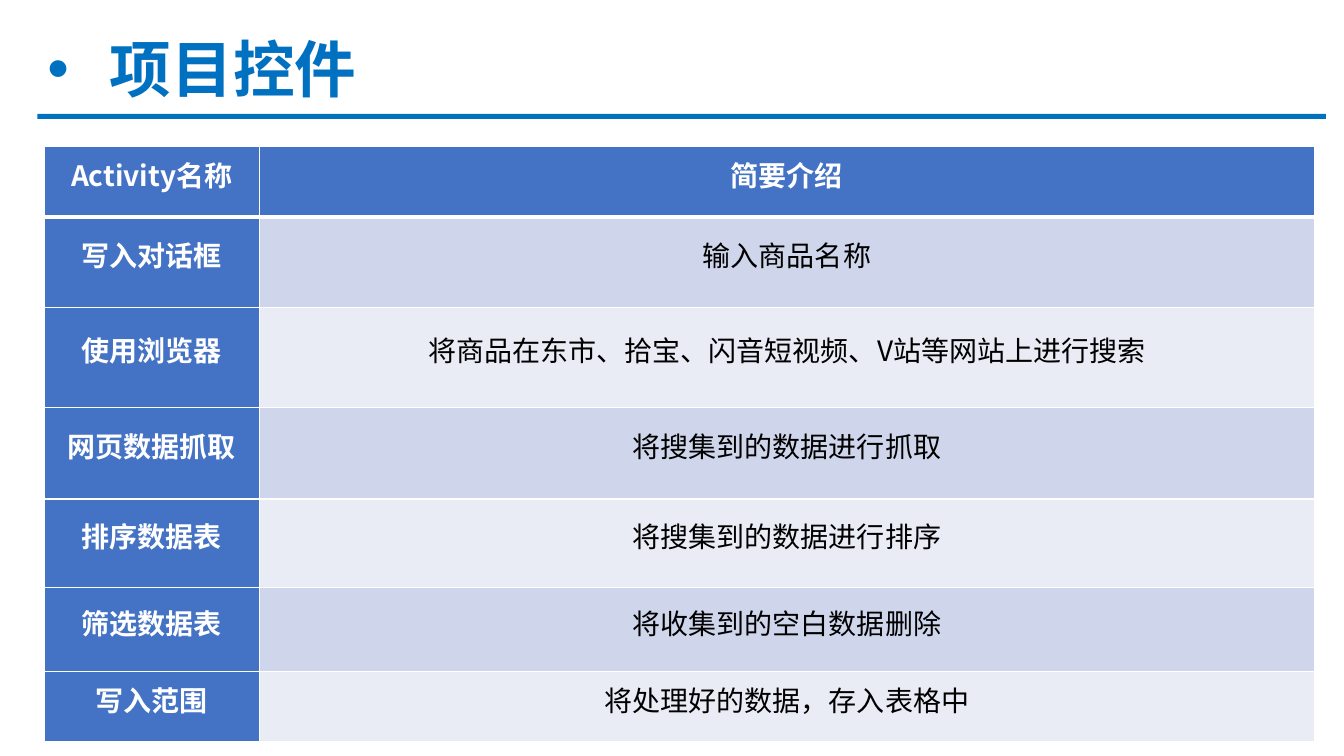
from dataclasses import dataclass

import pptx
import pptx.dml.color
import pptx.enum.shapes
import pptx.enum.text
import pptx.oxml
import pptx.oxml.ns
import pptx.util

EMU_PER_PX = 9144  # 100 px to the inch
FONT = "Noto Sans CJK SC"
ACCENT, HEADER, WHITE, BLACK = "0070C0", "4472C4", "FFFFFF", "000000"
BANDS = ("CFD5EA", "E9EBF5")
COLUMN_WIDTHS = (213, 1047)
MIDDLE = pptx.enum.text.MSO_ANCHOR.MIDDLE
ALIGN = pptx.enum.text.PP_ALIGN


@dataclass
class Activity:
    name: str
    summary: str
    height: int


ACTIVITIES = [
    Activity("Activity名称", "简要介绍", 70),
    Activity("写入对话框", "输入商品名称", 90),
    Activity("使用浏览器", "将商品在东市、拾宝、闪音短视频、V站等网站上进行搜索", 99),
    Activity("网页数据抓取", "将搜集到的数据进行抓取", 91),
    Activity("排序数据表", "将搜集到的数据进行排序", 88),
    Activity("筛选数据表", "将收集到的空白数据删除", 83),
    Activity("写入范围", "将处理好的数据，存入表格中", 70),
]


def px(length: int) -> pptx.util.Emu:
    return pptx.util.Emu(length * EMU_PER_PX)


def rgb(value: str) -> pptx.dml.color.RGBColor:
    return pptx.dml.color.RGBColor.from_string(value)


def apply(target, values: dict) -> None:
    for attribute, value in values.items():
        setattr(target, attribute, value)


def xml(tag: str, attributes: str, content: str = ""):
    namespace = pptx.oxml.ns.nsdecls("a")
    return pptx.oxml.parse_xml(f"<a:{tag} {namespace} {attributes}>{content}</a:{tag}>")


def write(paragraph, text: str, size: int, color: str, bold: bool) -> None:
    run = paragraph.add_run()
    run.text = text
    apply(run.font, {"size": pptx.util.Pt(size), "bold": bold, "name": FONT})
    run.font.color.rgb = rgb(color)
    run._r.get_or_add_rPr().append(xml("ea", f'typeface="{FONT}"'))


def add_heading(slide, text: str) -> None:
    heading = slide.shapes.title
    apply(heading, {"left": px(37), "top": px(-1), "width": px(1150), "height": px(145)})
    apply(heading.text_frame, {"vertical_anchor": MIDDLE, "word_wrap": True})
    paragraph = heading.text_frame.paragraphs[0]
    apply(paragraph, {"alignment": ALIGN.LEFT, "line_spacing": 0.9})
    properties = paragraph._p.get_or_add_pPr()
    properties.set("marL", str(px(62)))
    properties.set("indent", str(px(-62)))
    properties.append(xml("buFont", 'typeface="Arial"'))
    properties.append(xml("buChar", 'char="•"'))
    write(paragraph, text, 44, ACCENT, True)


def add_rule(slide) -> None:
    shape_type = pptx.enum.shapes.MSO_SHAPE.RECTANGLE
    rule = slide.shapes.add_shape(shape_type, px(37), px(113), px(1278), px(5))
    rule.shadow.inherit = False
    rule.fill.solid()
    rule.fill.fore_color.rgb = rgb(ACCENT)
    rule.line.fill.background()


def set_borders(cell, row: int) -> None:
    """White borders, heavier between the header and the body."""
    points = {"lnL": 1, "lnR": 1, "lnT": 3 if row == 1 else 1, "lnB": 3 if row == 0 else 1}
    color = f'<a:solidFill><a:srgbClr val="{WHITE}"/></a:solidFill>'
    for position, (side, weight) in enumerate(points.items()):
        border = xml(side, f'w="{pptx.util.Pt(weight)}"', color)
        cell._tc.get_or_add_tcPr().insert(position, border)


def fill_cell(cell, text: str, row: int, is_heading: bool) -> None:
    apply(cell, {"vertical_anchor": MIDDLE, "margin_left": px(8), "margin_right": px(8),
                 "margin_top": 0, "margin_bottom": 0})
    cell.fill.solid()
    cell.fill.fore_color.rgb = rgb(HEADER if is_heading else BANDS[(row - 1) % 2])
    set_borders(cell, row)
    paragraph = cell.text_frame.paragraphs[0]
    apply(paragraph, {"alignment": ALIGN.CENTER, "line_spacing": pptx.util.Pt(18)})
    write(paragraph, text, 20, WHITE if is_heading else BLACK, is_heading)


def add_activities(slide, activities: list[Activity]) -> None:
    height = sum(activity.height for activity in activities)
    table = slide.shapes.add_table(
        len(activities), len(COLUMN_WIDTHS),
        px(44), px(145), px(sum(COLUMN_WIDTHS)), px(height),
    ).table
    table.first_col = True
    for column, width in zip(table.columns, COLUMN_WIDTHS):
        column.width = px(width)
    for row, activity in enumerate(activities):
        table.rows[row].height = px(activity.height)
        fill_cell(table.cell(row, 0), activity.name, row, True)
        fill_cell(table.cell(row, 1), activity.summary, row, row == 0)


def main() -> None:
    presentation = pptx.Presentation()
    apply(presentation, {"slide_width": px(1333), "slide_height": px(750)})
    slide = presentation.slides.add_slide(presentation.slide_layouts.get_by_name("Title Only"))
    add_heading(slide, "项目控件")
    add_rule(slide)
    add_activities(slide, ACTIVITIES)
    presentation.save("out.pptx")


if __name__ == "__main__":
    main()
